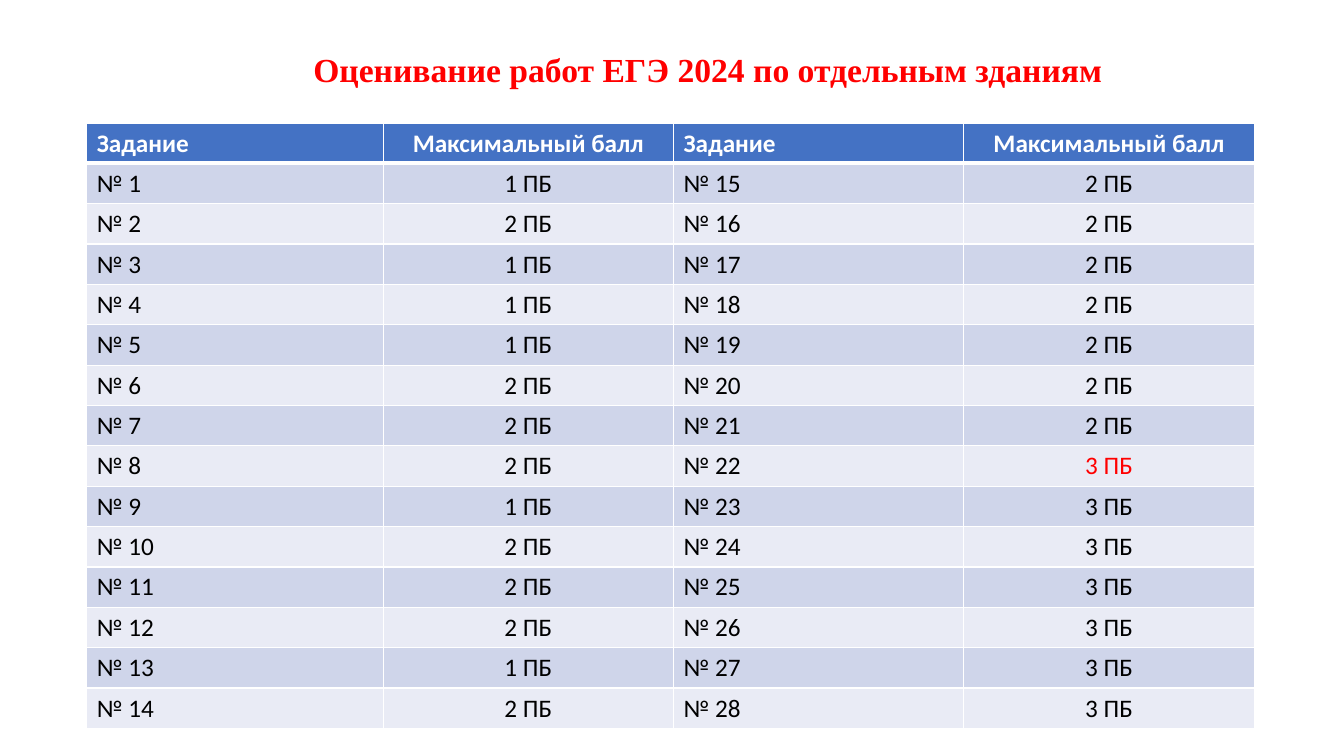
from pptx import Presentation
from pptx.dml.color import RGBColor
from pptx.enum.text import MSO_ANCHOR, PP_ALIGN
from pptx.oxml import parse_xml
from pptx.oxml.ns import nsdecls
from pptx.util import Inches, Pt

WIDE, HIGH = 13.33, 7.5
LEFT, TOP = 0.86, 1.22
COLS = [2.94, 2.88, 2.88, 2.88]
ROW = 0.4
HEADS = ["Задание", "Максимальный балл"] * 2
HALF = 14
MARKS = [1, 2, 1, 1, 1, 2, 2, 2, 1, 2, 2, 2, 1, 2] + [2] * 7 + [3] * 7
HOT = 22  # task whose mark stands out
COLORS = {
    "red": "FF0000",
    "black": "000000",
    "white": "FFFFFF",
    "head": "4472C4",
    "odd": "CFD5EA",
    "even": "E9EBF5",
}


def color(name):
    return RGBColor.from_string(COLORS[name])


def write(frame, text, size=18, font="Calibri", ink="black", bold=False,
          align=PP_ALIGN.LEFT, space=1.0):
    para = frame.paragraphs[0]
    para.alignment = align
    para.line_spacing = space
    run = para.add_run()
    run.text = text
    run.font.size = Pt(size)
    run.font.name = font
    run.font.bold = bold
    run.font.color.rgb = color(ink)


def add_title(slide, text):
    box = slide.shapes.add_textbox(
        Inches(1.27), Inches(0.37), Inches(11.5), Inches(0.68))
    frame = box.text_frame
    frame.word_wrap = True
    frame.vertical_anchor = MSO_ANCHOR.MIDDLE
    write(frame, text, size=24, font="Times New Roman", ink="red",
          bold=True, align=PP_ALIGN.CENTER, space=0.9)


def edge(cell, side, width):
    """Draw a white border on one side: L, R, T or B."""
    cell._tc.get_or_add_tcPr().append(parse_xml(
        f'<a:ln{side} {nsdecls("a")} w="{Pt(width)}"><a:solidFill>'
        f'<a:srgbClr val="{COLORS["white"]}"/></a:solidFill></a:ln{side}>'))


def fill_cell(cell, text, back, thick=(1, 1), **style):
    """Thick holds the widths of the top and bottom borders."""
    for side, width in zip("LRTB", (1, 1, *thick)):
        edge(cell, side, width)
    cell.fill.solid()
    cell.fill.fore_color.rgb = color(back)
    write(cell.text_frame, text, **style)


def add_marks(slide):
    count = HALF + 1
    table = slide.shapes.add_table(
        count, len(COLS), Inches(LEFT), Inches(TOP),
        Inches(sum(COLS)), Inches(ROW * count)).table
    for col, width in zip(table.columns, COLS):
        col.width = Inches(width)
    for row in table.rows:
        row.height = Inches(ROW)

    sides = [PP_ALIGN.LEFT, PP_ALIGN.CENTER] * 2
    for col, (text, side) in enumerate(zip(HEADS, sides)):
        fill_cell(table.cell(0, col), text, "head", thick=(1, 3),
                  ink="white", bold=True, align=side)
    for index, mark in enumerate(MARKS):
        pair, row = divmod(index, HALF)
        task = index + 1
        back = "even" if row % 2 else "odd"
        thick = (1 if row else 3, 1)
        fill_cell(table.cell(row + 1, 2 * pair), f"№ {task}", back, thick)
        fill_cell(table.cell(row + 1, 2 * pair + 1), f"{mark} ПБ", back, thick,
                  ink="red" if task == HOT else "black",
                  align=PP_ALIGN.CENTER)


def main():
    deck = Presentation()
    deck.slide_width, deck.slide_height = Inches(WIDE), Inches(HIGH)
    slide = deck.slides.add_slide(deck.slide_layouts[6])
    add_title(slide, "Оценивание работ ЕГЭ 2024 по отдельным зданиям")
    add_marks(slide)
    deck.save("out.pptx")


if __name__ == "__main__":
    main()
